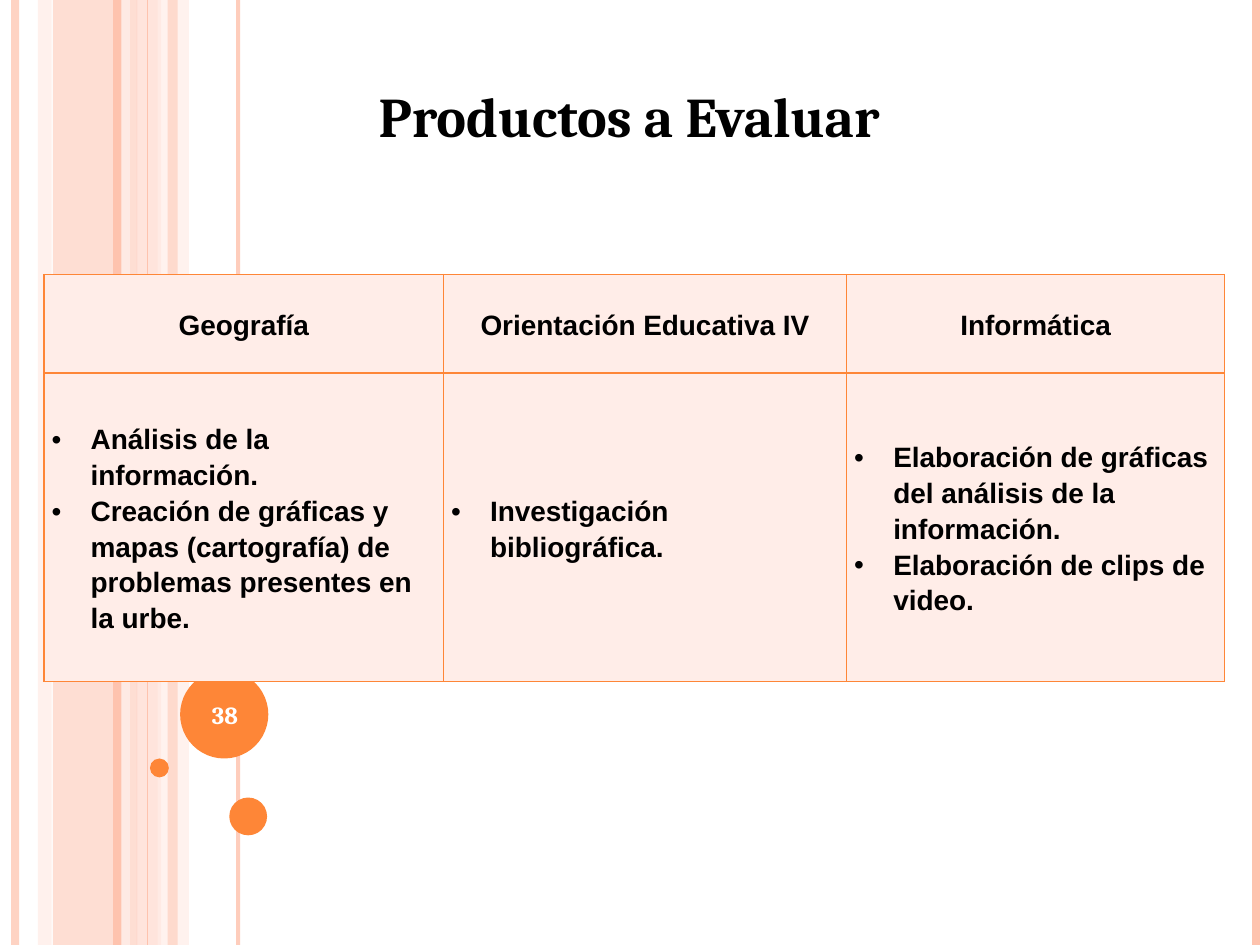
from pptx import Presentation
from pptx.dml.color import RGBColor
from pptx.enum.shapes import MSO_CONNECTOR, MSO_SHAPE
from pptx.enum.text import MSO_ANCHOR, PP_ALIGN
from pptx.oxml.ns import qn
from pptx.util import Inches, Pt
from lxml.etree import SubElement

ORANGE = RGBColor(0xFE, 0x86, 0x37)
SALMON = RGBColor(0xFE, 0xC3, 0xAE)
PEACH = RGBColor(0xFF, 0xD9, 0xCE)
BLUSH = RGBColor(0xFF, 0xED, 0xE8)
BLACK = RGBColor(0, 0, 0)
WHITE = RGBColor(0xFF, 0xFF, 0xFF)

WIDTH, HEIGHT = 10, 7.5
TITLE = "Productos a Evaluar"
PAGE_NUMBER = "38"
PRODUCTS = {
    "Geografía": [
        "Análisis de la información.",
        "Creación de gráficas y mapas (cartografía) de problemas presentes en la urbe.",
    ],
    "Orientación Educativa IV": ["Investigación bibliográfica."],
    "Informática": [
        "Elaboración de gráficas del análisis de la información.",
        "Elaboración de clips de video.",
    ],
}
COLUMN_WIDTHS = (3.17, 3.2, 3)
ROW_HEIGHTS = (0.78, 2.45)
TABLE_LEFT, TABLE_TOP = 0.35, 2.18
CELL_MARGIN, BULLET_INDENT = 0.06, 0.31

# left, width, colour, opacity
BANDS = [
    (0.42, 0.67, SALMON, 54),
    (0.3, 0.11, PEACH, 36),
    (1.08, 0.2, PEACH, 70),
    (1.25, 0.25, BLUSH, 71),
]
STRIPES = [
    (0.12, 4.5, SALMON, 73),
    (1, 4.5, BLUSH, 83),
    (0.93, 4.5, SALMON, 100),
    (1.89, 2.25, SALMON, 82),
    (1.17, 0.75, SALMON, 100),
    (9.97, 4.5, SALMON, 100),
]
FRONT_BAND = (1.33, 0.08, SALMON, 51)
CIRCLES = [(1.43, 5.32, 0.7), (1.19, 6.02, 0.15), (1.82, 6.33, 0.3)]


def set_opacity(shape, percent):
    for color in shape._element.spPr.iter(qn("a:srgbClr")):
        SubElement(color, qn("a:alpha"), val=str(percent * 1000))


def add_filled(page, kind, left, top, width, height, color):
    shape = page.shapes.add_shape(
        kind, Inches(left), Inches(top), Inches(width), Inches(height))
    shape.shadow.inherit = False
    shape.fill.solid()
    shape.fill.fore_color.rgb = color
    shape.line.fill.background()
    return shape


def add_band(page, left, width, color, opacity):
    band = add_filled(page, MSO_SHAPE.RECTANGLE, left, 0, width, HEIGHT, color)
    set_opacity(band, opacity)


def add_stripe(page, left, weight, color, opacity):
    stripe = page.shapes.add_connector(
        MSO_CONNECTOR.STRAIGHT, Inches(left), 0, Inches(left), Inches(HEIGHT))
    stripe.line.width = Pt(weight)
    stripe.line.color.rgb = color
    set_opacity(stripe, opacity)
    SubElement(stripe._element.spPr, qn("a:effectLst"))


def add_span(para, text, font, size, color):
    span = para.add_run()
    span.text = text
    span.font.name = font
    span.font.size = Pt(size)
    span.font.bold = True
    span.font.color.rgb = color


def add_label(page, left, top, width, height, text, size, color):
    box = page.shapes.add_textbox(
        Inches(left), Inches(top), Inches(width), Inches(height))
    box.text_frame.word_wrap = True
    box.text_frame.vertical_anchor = MSO_ANCHOR.MIDDLE
    para = box.text_frame.paragraphs[0]
    para.alignment = PP_ALIGN.CENTER
    add_span(para, text, "Cambria", size, color)


def add_bullet(para):
    properties = para._p.get_or_add_pPr()
    properties.set("marL", str(Inches(BULLET_INDENT)))
    properties.set("indent", str(-Inches(BULLET_INDENT)))
    SubElement(properties, qn("a:buFont"), typeface="Arial")
    SubElement(properties, qn("a:buChar"), char="•")


def add_borders(cell):
    properties = cell._tc.get_or_add_tcPr()
    for position, side in enumerate(("lnL", "lnR", "lnT", "lnB")):
        border = SubElement(properties, qn(f"a:{side}"), w=str(Pt(1)))
        fill = SubElement(border, qn("a:solidFill"))
        SubElement(fill, qn("a:srgbClr"), val=str(ORANGE))
        properties.insert(position, border)


def fill_cell(cell, lines, bulleted):
    cell.fill.solid()
    cell.fill.fore_color.rgb = BLUSH
    cell.vertical_anchor = MSO_ANCHOR.MIDDLE
    cell.margin_left = cell.margin_right = Inches(CELL_MARGIN)
    cell.margin_top = cell.margin_bottom = Inches(CELL_MARGIN)
    add_borders(cell)
    frame = cell.text_frame
    for index, line in enumerate(lines):
        para = frame.add_paragraph() if index else frame.paragraphs[0]
        para.line_spacing = 1.15
        para.alignment = PP_ALIGN.LEFT if bulleted else PP_ALIGN.CENTER
        if bulleted:
            add_bullet(para)
        add_span(para, line, "Arial", 16, BLACK)


def add_products(page):
    table = page.shapes.add_table(
        len(ROW_HEIGHTS), len(COLUMN_WIDTHS), Inches(TABLE_LEFT), Inches(TABLE_TOP),
        Inches(sum(COLUMN_WIDTHS)), Inches(sum(ROW_HEIGHTS))).table
    table.first_row = table.horz_banding = False
    for row, height in zip(table.rows, ROW_HEIGHTS):
        row.height = Inches(height)
    for index, (subject, products) in enumerate(PRODUCTS.items()):
        table.columns[index].width = Inches(COLUMN_WIDTHS[index])
        fill_cell(table.cell(0, index), [subject], False)
        fill_cell(table.cell(1, index), products, True)


def main():
    deck = Presentation()
    deck.slide_width, deck.slide_height = Inches(WIDTH), Inches(HEIGHT)
    page = deck.slides.add_slide(deck.slide_layouts[6])
    for band in BANDS:
        add_band(page, *band)
    for stripe in STRIPES:
        add_stripe(page, *stripe)
    add_band(page, *FRONT_BAND)
    for left, top, size in CIRCLES:
        add_filled(page, MSO_SHAPE.OVAL, left, top, size, size, ORANGE)
    add_label(page, 1.06, 0.59, 7.87, 0.64, TITLE, 32, BLACK)
    add_label(page, 1.45, 5.39, 0.67, 0.57, PAGE_NUMBER, 14, WHITE)
    add_products(page)
    deck.save("out.pptx")


if __name__ == "__main__":
    main()
